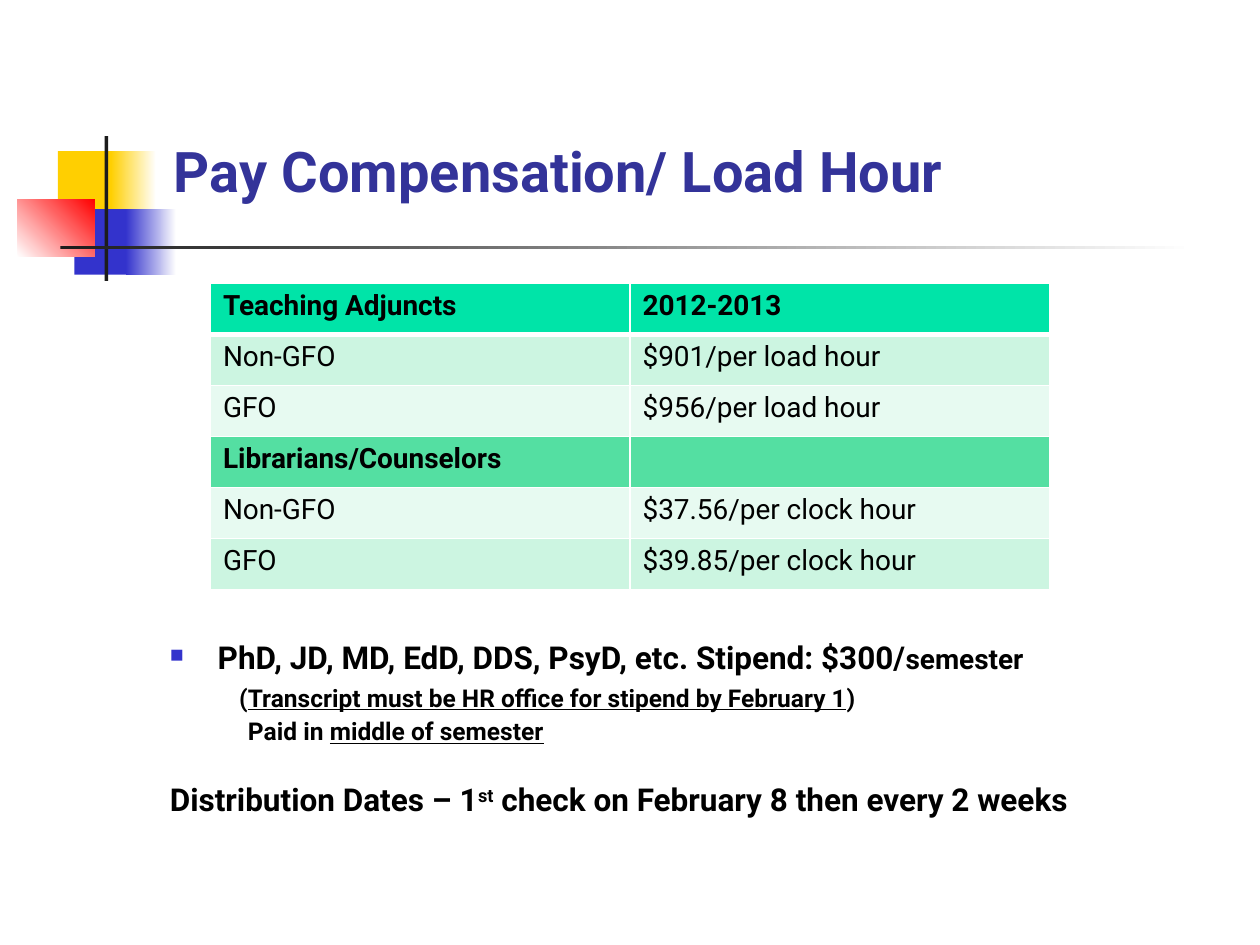
from pptx import Presentation
from pptx.dml.color import RGBColor
from pptx.enum import shapes, text
from pptx.oxml import parse_xml
from pptx.oxml.ns import nsdecls
from pptx.util import Inches, Pt

FONT = "Roboto"
WHITE = RGBColor(0xFF, 0xFF, 0xFF)
BLACK = RGBColor(0, 0, 0)
CHARCOAL = RGBColor(0x1C, 0x1C, 0x1C)
YELLOW = RGBColor(0xFF, 0xCF, 0x01)
BLUE = RGBColor(0x33, 0x33, 0xCC)
RED = RGBColor(0xFF, 0, 0)
NAVY = RGBColor(0x33, 0x33, 0x99)
HEADER_GREEN = RGBColor(0x00, 0xE4, 0xA8)
SECTION_GREEN = RGBColor(0x54, 0xDF, 0xA2)
MINT = RGBColor(0xCC, 0xF5, 0xE1)
PALE_MINT = RGBColor(0xE7, 0xFA, 0xF1)

TITLE = "Pay Compensation/ Load Hour"

# left, top, width, height, colours from start to end, angle
ORNAMENTS = [
    (0.46, 1.2, 0.48, 0.52, [YELLOW], 0),
    (0.88, 1.2, 0.36, 0.52, [YELLOW, WHITE], 0),
    (0.59, 1.66, 0.46, 0.52, [BLUE], 0),
    (1, 1.66, 0.4, 0.52, [BLUE, WHITE], 0),
    (0.14, 1.58, 0.61, 0.46, [WHITE, RED], 45),
    (0.83, 1.08, 0.03, 1.15, [CHARCOAL], 0),
    (0.48, 1.95, 9, 0.03, [CHARCOAL, WHITE], 0),
]

# group, pay, fill, bold
PAY_ROWS = [
    ("Teaching Adjuncts", "2012-2013", HEADER_GREEN, True),
    ("Non-GFO", "$901/per load hour", MINT, False),
    ("GFO", "$956/per load hour", PALE_MINT, False),
    ("Librarians/Counselors", "", SECTION_GREEN, True),
    ("Non-GFO", "$37.56/per clock hour", PALE_MINT, False),
    ("GFO", "$39.85/per clock hour", MINT, False),
]

# left margin, first-line indent, space before, bullet, runs of (text, size, style)
NOTES = [
    (0.38, -0.38, 0, True, [("PhD, JD, MD, EdD, DDS, PsyD, etc. Stipend: $300/", 18, ""),
                            ("semester", 16, "")]),
    (0.55, 0, 5.5, False, [("(", 14, ""),
                           ("Transcript must be HR office for stipend by February 1", 14, "underline"),
                           (")", 14, "")]),
    (0.62, 0, 4, False, [("Paid in ", 14, ""), ("middle of semester", 14, "underline")]),
    (0, 0, 22, False, [("Distribution Dates – 1", 18, ""), ("st", 18, "superscript"),
                       (" check on February 8 then every 2 weeks", 18, "")]),
]


def style(font, size, color, bold):
    font.name, font.size, font.bold = FONT, Pt(size), bold
    font.color.rgb = color


def add_ornament(slide, left, top, width, height, colors, angle):
    block = slide.shapes.add_shape(shapes.MSO_SHAPE.RECTANGLE, Inches(left), Inches(top),
                                   Inches(width), Inches(height))
    block.shadow.inherit = False
    block.line.fill.background()
    if len(colors) == 1:
        block.fill.solid()
        block.fill.fore_color.rgb = colors[0]
        return
    block.fill.gradient()
    block.fill.gradient_angle = angle
    for stop, color, position in zip(block.fill.gradient_stops, colors, (0, 1)):
        stop.color.rgb = color
        stop.position = position


def set_borders(cell, bottom_width):
    """White lines on all four sides, in the order the schema wants."""
    properties = cell._tc.get_or_add_tcPr()
    for index, (side, width) in enumerate(
            [("lnL", 1), ("lnR", 1), ("lnT", 1), ("lnB", bottom_width)]):
        properties.insert(index, parse_xml(
            f'<a:{side} {nsdecls("a")} w="{Pt(width)}"><a:solidFill>'
            f'<a:srgbClr val="{WHITE}"/></a:solidFill></a:{side}>'))


def add_pay_table(slide):
    table = slide.shapes.add_table(len(PAY_ROWS), 2, Inches(1.67), Inches(2.25),
                                   Inches(6.66), Inches(2.43)).table
    for r, (group, pay, fill, bold) in enumerate(PAY_ROWS):
        for c, wording in enumerate((group, pay)):
            cell = table.cell(r, c)
            cell.text = wording
            paragraph = cell.text_frame.paragraphs[0]
            style(paragraph.font, 16, BLACK, bold)
            for run in paragraph.runs:
                style(run.font, 16, BLACK, bold)
            cell.fill.solid()
            cell.fill.fore_color.rgb = fill
            set_borders(cell, 3 if r == 0 else 1)


def add_notes_text(slide):
    frame = slide.shapes.add_textbox(Inches(1.25), Inches(5.05),
                                     Inches(8.54), Inches(2.12)).text_frame
    frame.word_wrap = True
    for i, (margin, indent, before, bullet, runs) in enumerate(NOTES):
        paragraph = frame.add_paragraph() if i else frame.paragraphs[0]
        paragraph.line_spacing = 0.9
        paragraph.space_before = Pt(before)
        properties = paragraph._p.get_or_add_pPr()
        properties.set("marL", str(Inches(margin)))
        properties.set("indent", str(Inches(indent)))
        if bullet:
            for tag in (f'buClr {nsdecls("a")}><a:srgbClr val="{BLUE}"/></a:buClr',
                        f'buSzPct {nsdecls("a")} val="60000"/',
                        f'buChar {nsdecls("a")} char="■"/'):
                properties.append(parse_xml(f"<a:{tag}>"))
        for wording, size, effect in runs:
            run = paragraph.add_run()
            run.text = wording
            style(run.font, size, BLACK, True)
            if effect == "underline":
                run.font.underline = True
            elif effect == "superscript":
                run._r.get_or_add_rPr().set("baseline", "30000")


def main():
    deck = Presentation()
    deck.slide_width, deck.slide_height = Inches(10), Inches(7.5)
    slide = deck.slides.add_slide(deck.slide_layouts[5])

    for ornament in ORNAMENTS:
        add_ornament(slide, *ornament)

    title = slide.shapes.title
    title.left, title.top = Inches(1.17), Inches(0.42)
    title.width, title.height = Inches(8.28), Inches(1.25)
    frame = title.text_frame
    frame.text = TITLE
    frame.auto_size = text.MSO_AUTO_SIZE.NONE
    frame.vertical_anchor = text.MSO_ANCHOR.BOTTOM
    frame.margin_left = Inches(0.21)
    frame.paragraphs[0].alignment = text.PP_ALIGN.LEFT
    style(frame.paragraphs[0].runs[0].font, 32, NAVY, True)

    add_notes_text(slide)
    add_pay_table(slide)
    deck.save("out.pptx")


if __name__ == "__main__":
    main()
